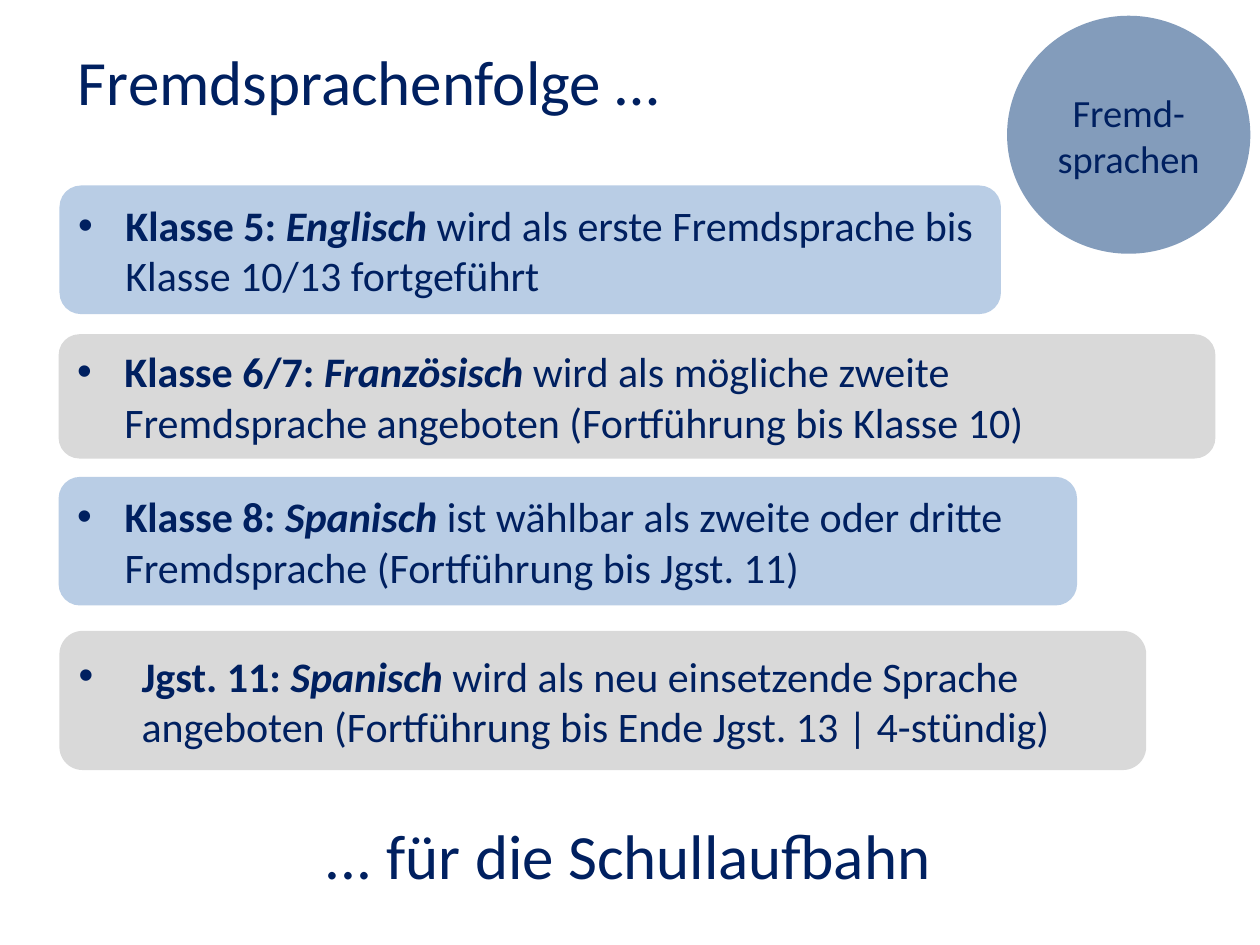
import lxml.etree
import pptx
import pptx.dml.color
import pptx.enum.shapes
import pptx.enum.text
import pptx.oxml.ns
import pptx.util

Pt = pptx.util.Pt
Color = pptx.dml.color.RGBColor
Shape = pptx.enum.shapes.MSO_SHAPE
Text = pptx.enum.text

NAVY = Color(0x00, 0x20, 0x60)
STEEL = Color(0x37, 0x60, 0x92)
BLUE = Color(0xB9, 0xCD, 0xE5)
GREY = Color(0xD9, 0xD9, 0xD9)

LANGUAGES = [
    (34, 106, 538, 73.5, BLUE, 27, "Klasse 5: ", "Englisch",
     " wird als erste Fremdsprache bis Klasse 10/13 fortgeführt"),
    (33.5, 191, 661, 71, GREY, 27, "Klasse 6/7: ", "Französisch",
     " wird als mögliche zweite Fremdsprache angeboten (Fortführung bis Klasse 10)"),
    (33.5, 272.5, 582, 73.5, BLUE, 27, "Klasse 8: ", "Spanisch",
     " ist wählbar als zweite oder dritte Fremdsprache (Fortführung bis Jgst. 11)"),
    (34, 360.5, 621, 79.5, GREY, 36, "Jgst. 11: ", "Spanisch",
     " wird als neu einsetzende Sprache angeboten (Fortführung bis Ende Jgst. 13 | 4-stündig)"),
]


class Painter:
    """Draws elements in one style on the current slide."""

    def __init__(self, page, font="Calibri", color=NAVY):
        self.page = page
        self.font = font
        self.color = color

    def style(self, para, size):
        para.font.name = self.font
        para.font.size = Pt(size)
        para.font.color.rgb = self.color

    def shape(self, kind, left, top, width, height, fill):
        shape = self.page.shapes.add_shape(kind, Pt(left), Pt(top), Pt(width), Pt(height))
        shape.shadow.inherit = False
        shape.fill.solid()
        shape.fill.fore_color.rgb = fill
        shape.line.fill.background()
        shape.text_frame.word_wrap = True
        shape.text_frame.vertical_anchor = Text.MSO_ANCHOR.MIDDLE
        return shape

    def heading(self, left, top, width, height, text):
        box = self.page.shapes.add_textbox(Pt(left), Pt(top), Pt(width), Pt(height))
        box.text_frame.word_wrap = False
        box.text_frame.auto_size = Text.MSO_AUTO_SIZE.SHAPE_TO_FIT_TEXT
        para = box.text_frame.paragraphs[0]
        para.text = text
        self.style(para, 36)

    def badge(self, left, top, width, height, text, opacity):
        circle = self.shape(Shape.FLOWCHART_CONNECTOR, left, top, width, height, STEEL)
        tag = pptx.oxml.ns.qn
        color = circle.fill._xPr.find(tag("a:solidFill")).find(tag("a:srgbClr"))
        lxml.etree.SubElement(color, tag("a:alpha"), val=str(opacity * 1000))
        para = circle.text_frame.paragraphs[0]
        para.text = text
        para.alignment = Text.PP_ALIGN.CENTER
        self.style(para, 22)

    def language(self, left, top, width, height, fill, indent, grade, name, detail):
        card = self.shape(Shape.ROUNDED_RECTANGLE, left, top, width, height, fill)
        para = card.text_frame.paragraphs[0]
        para.alignment = Text.PP_ALIGN.LEFT
        properties = para._p.get_or_add_pPr()
        properties.set("marL", str(Pt(indent)))
        properties.set("indent", str(-Pt(indent)))
        tag = pptx.oxml.ns.qn
        lxml.etree.SubElement(properties, tag("a:buFont"), typeface="Arial")
        lxml.etree.SubElement(properties, tag("a:buChar"), char="•")
        self.style(para, 24)
        for text, bold, italic in ((grade, True, False), (name, True, True), (detail, False, False)):
            span = para.add_run()
            span.text = text
            span.font.bold = bold
            span.font.italic = italic


def main():
    deck = pptx.Presentation()
    deck.slide_width, deck.slide_height = Pt(720), Pt(540)
    painter = Painter(deck.slides.add_slide(deck.slide_layouts[6]))
    painter.badge(575.5, 9, 139, 136, "Fremd-sprachen", 62)
    painter.heading(37.5, 21, 349, 51, "Fremdsprachenfolge …")
    painter.heading(178.5, 463, 373, 51, "... für die Schullaufbahn")
    for entry in LANGUAGES:
        painter.language(*entry)
    deck.save("out.pptx")


if __name__ == "__main__":
    main()
